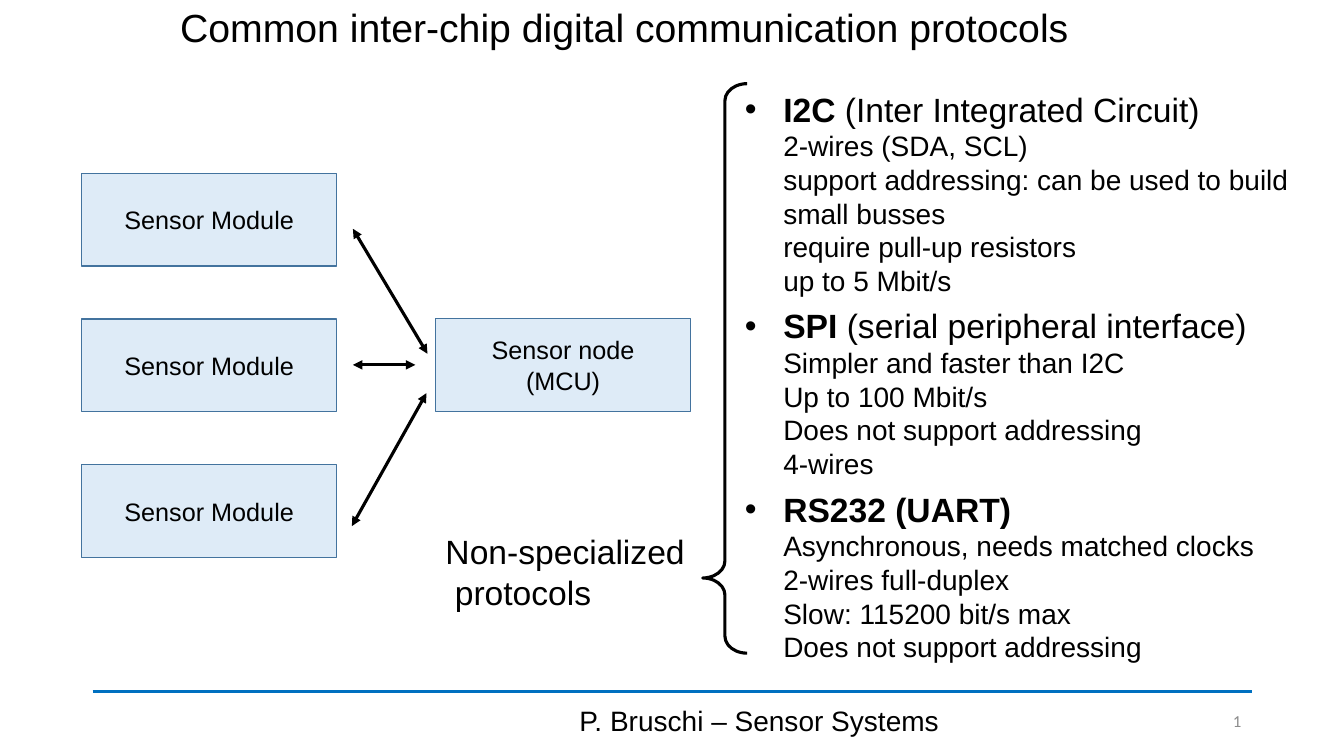
from dataclasses import dataclass

from lxml.etree import SubElement as Sub
from pptx import Presentation
from pptx.dml.color import RGBColor as Color
from pptx.enum.shapes import MSO_CONNECTOR as Link, MSO_SHAPE as Form
from pptx.enum.text import MSO_ANCHOR as Anchor, MSO_AUTO_SIZE as Fit, PP_ALIGN as Align
from pptx.oxml.ns import qn
from pptx.util import Inches, Pt


@dataclass(frozen=True)
class Theme:
    font: str = "Arial"
    small: str = "Calibri"
    ink: str = "000000"
    gray: str = "8C8C8C"
    fill: str = "DEEBF7"
    edge: str = "43739E"
    rule: str = "0070C0"
    title: int = 28
    head: int = 24
    body: int = 20
    label: int = 18
    page: int = 12


THEME = Theme()

BUSES = [
    ("I2C", " (Inter Integrated Circuit)", [
        "2-wires (SDA, SCL)",
        "support addressing: can be used to build small busses",
        "require pull-up resistors",
        "up to 5 Mbit/s",
    ]),
    ("SPI", " (serial peripheral interface)", [
        "Simpler and faster than I2C",
        "Up to 100 Mbit/s",
        "Does not support addressing",
        "4-wires",
    ]),
    ("RS232 (UART)", "", [
        "Asynchronous, needs matched clocks",
        "2-wires full-duplex",
        "Slow: 115200 bit/s max",
        "Does not support addressing",
    ]),
]

ARROWS = [
    (3.5, 2.27, 4.24, 3.51),
    (3.49, 5.22, 4.23, 3.9),
    (3.5, 3.62, 4.12, 3.62),
]


def style(font, size, color=THEME.ink, name=THEME.font):
    font.name = name
    font.size = Pt(size)
    font.color.rgb = Color.from_string(color)


def write(frame, text, size, align=Align.LEFT, color=THEME.ink, name=THEME.font):
    frame.text = text
    for para in frame.paragraphs:
        para.alignment = align
        style(para.font, size, color, name)


def add_text(slide, spot, wrap=True, anchor=Anchor.TOP):
    frame = slide.shapes.add_textbox(*map(Inches, spot)).text_frame
    frame.word_wrap = wrap
    frame.vertical_anchor = anchor
    return frame


def add_title(slide, text):
    title = slide.shapes.title
    title.left, title.top = Inches(0.44), Inches(-0.06)
    title.width, title.height = Inches(11.5), Inches(0.72)
    frame = title.text_frame
    frame.auto_size = Fit.NONE
    frame.vertical_anchor = Anchor.MIDDLE
    write(frame, text, THEME.title, Align.CENTER)
    frame.paragraphs[0].line_spacing = 0.9


def add_box(slide, left, top, text):
    box = slide.shapes.add_shape(
        Form.RECTANGLE, Inches(left), Inches(top), Inches(2.53), Inches(0.92))
    box.shadow.inherit = False
    box.fill.solid()
    box.fill.fore_color.rgb = Color.from_string(THEME.fill)
    box.line.color.rgb = Color.from_string(THEME.edge)
    box.line.width = Pt(1)
    box.text_frame.vertical_anchor = Anchor.MIDDLE
    write(box.text_frame, text, THEME.label, Align.CENTER)


def add_line(slide, ends, color, width, heads=False):
    line = slide.shapes.add_connector(Link.STRAIGHT, *map(Inches, ends))
    line.line.color.rgb = Color.from_string(color)
    line.line.width = Pt(width)
    if heads:
        for tag in ("a:headEnd", "a:tailEnd"):
            Sub(line.line._get_or_add_ln(), qn(tag), type="triangle")
    Sub(line._element.spPr, qn("a:effectLst"))


def add_brace(slide):
    brace = slide.shapes.add_shape(
        Form.LEFT_BRACE, Inches(6.97), Inches(0.83), Inches(0.44), Inches(5.65))
    brace.shadow.inherit = False
    brace.adjustments[0] = 0.383
    brace.adjustments[1] = 0.868
    brace.fill.background()
    brace.line.color.rgb = Color.from_string(THEME.ink)
    brace.line.width = Pt(2.25)


def add_run(para, text, size, bold=False):
    run = para.add_run()
    run.text = text
    style(run.font, size)
    run.font.bold = bold


def add_bullet(para, name, note, facts):
    para.space_after = Pt(6)
    props = para._p.get_or_add_pPr()
    props.set("marL", str(Inches(0.38)))
    props.set("indent", str(-Inches(0.38)))
    Sub(props, qn("a:buFont"), typeface=THEME.font)
    Sub(props, qn("a:buChar"), char="•")
    add_run(para, name, THEME.head, True)
    if note:
        add_run(para, note, THEME.head)
    for fact in facts:
        para.add_line_break()
        add_run(para, fact, THEME.body)


def add_list(slide):
    frame = add_text(slide, (7.29, 0.83, 6.05, 5.86))
    for i, bus in enumerate(BUSES):
        para = frame.add_paragraph() if i else frame.paragraphs[0]
        add_bullet(para, *bus)


def add_footer(slide):
    add_line(slide, (0.92, 6.86, 12.42, 6.86), THEME.rule, 2.75)
    foot = add_text(slide, (4.42, 6.95, 6.22, 0.4), anchor=Anchor.MIDDLE)
    write(foot, "P. Bruschi – Sensor Systems", THEME.body, Align.CENTER)
    page = add_text(slide, (11.45, 6.95, 0.96, 0.4), anchor=Anchor.MIDDLE)
    write(page, "1", THEME.page, Align.RIGHT, THEME.gray, THEME.small)


def main():
    deck = Presentation()
    deck.slide_width, deck.slide_height = Inches(13.33), Inches(7.5)
    slide = deck.slides.add_slide(deck.slide_layouts[5])
    add_footer(slide)
    add_title(slide, "Common inter-chip digital communication protocols")
    for i in range(3):
        add_box(slide, 0.81, 1.72 + 1.445 * i, "Sensor Module")
    add_box(slide, 4.32, 3.16, "Sensor node\n(MCU)")
    for ends in ARROWS:
        add_line(slide, ends, THEME.ink, 2.25, heads=True)
    add_list(slide)
    add_brace(slide)
    label = add_text(slide, (4.32, 5.22, 2.58, 0.91), wrap=False)
    write(label, "Non-specialized\v protocols", THEME.head)
    deck.save("out.pptx")


if __name__ == "__main__":
    main()
